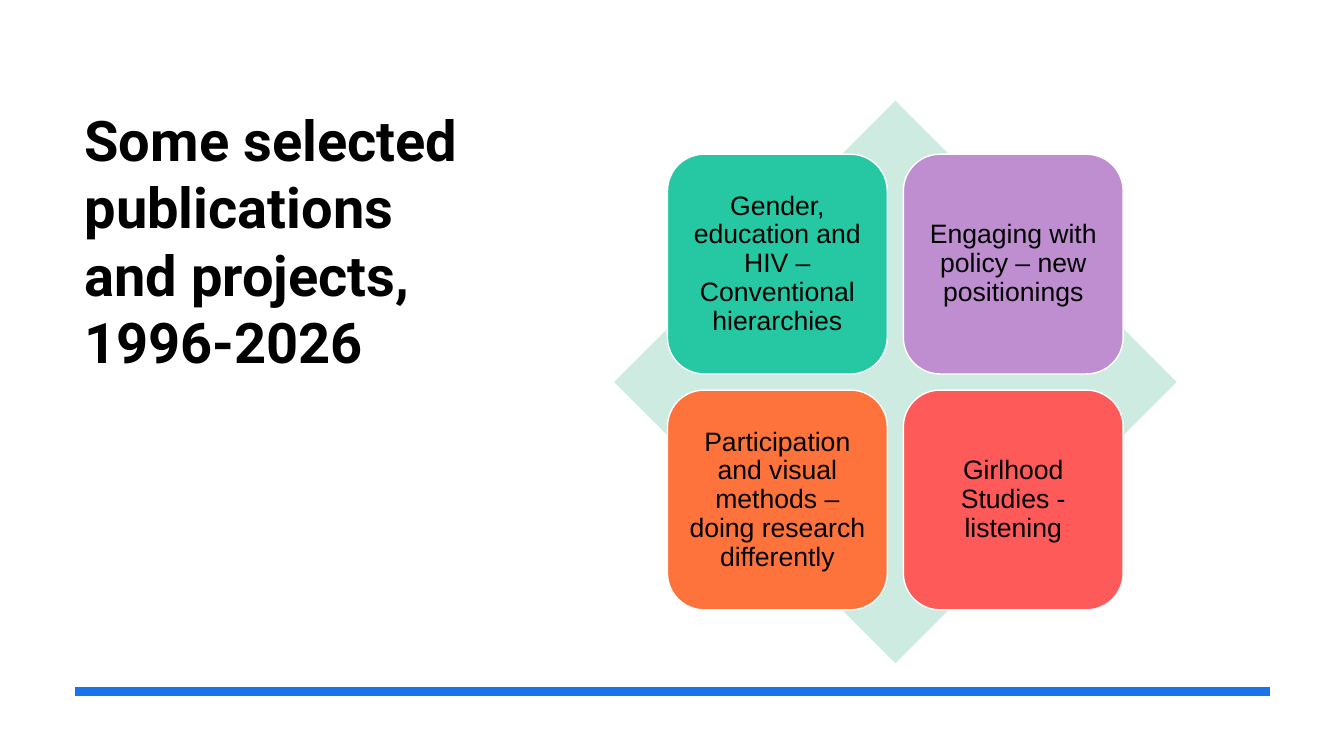
from lxml import etree
from pptx import Presentation
from pptx.dml.color import RGBColor
from pptx.enum.shapes import MSO_CONNECTOR as Connector, MSO_SHAPE as Shape
from pptx.enum.text import MSO_ANCHOR as Anchor, PP_ALIGN as Align
from pptx.oxml.ns import qn
from pptx.util import Inches, Pt

COLOURS = {
    "text": "000000",
    "rule": "1973EB",
    "diamond": "CDEBE0",
    "outline": "FFFFFF",
    "green": "25C8A2",
    "purple": "BF8ED1",
    "orange": "FE733C",
    "red": "FE5A5A",
}
THEMES = [
    ("Gender, education and HIV – Conventional hierarchies", "green"),
    ("Engaging with policy – new positionings", "purple"),
    ("Participation and visual methods – doing research differently", "orange"),
    ("Girlhood Studies - listening", "red"),
]


def colour(name):
    return RGBColor.from_string(COLOURS[name])


def set_font(para, name, size, bold=False):
    para.font.name = name
    para.font.size = Pt(size)
    para.font.bold = bold
    para.font.color.rgb = colour("text")


deck = Presentation()
deck.slide_width, deck.slide_height = Inches(13.33), Inches(7.5)
page = deck.slides.add_slide(deck.slide_layouts[6])

# Title
title = page.shapes.add_textbox(Inches(0.74), Inches(1), Inches(4.02), Inches(4.55))
title.text_frame.word_wrap = True
para = title.text_frame.paragraphs[0]
para.text = "Some selected publications and projects, 1996-2026"
set_font(para, "Roboto", 40, bold=True)

# Rule along the bottom
rule = page.shapes.add_connector(
    Connector.STRAIGHT, Inches(0.74), Inches(6.86), Inches(12.6), Inches(6.86))
rule.line.color.rgb = colour("rule")
rule.line.width = Pt(6)
etree.SubElement(rule._element.spPr, qn("a:effectLst"))

# Diamond behind the themes
matrix = page.shapes.add_group_shape()
diamond = matrix.shapes.add_shape(
    Shape.DIAMOND, Inches(6.09), Inches(1), Inches(5.58), Inches(5.58))
diamond.shadow.inherit = False
diamond.fill.solid()
diamond.fill.fore_color.rgb = colour("diamond")
diamond.line.fill.background()

# Two by two grid of themes
side, pitch = 2.18, 2.34
for index, (text, fill) in enumerate(THEMES):
    row, column = divmod(index, 2)
    box = matrix.shapes.add_shape(
        Shape.ROUNDED_RECTANGLE,
        Inches(6.62 + column * pitch), Inches(1.53 + row * pitch),
        Inches(side), Inches(side))
    box.shadow.inherit = False
    box.fill.solid()
    box.fill.fore_color.rgb = colour(fill)
    box.line.color.rgb = colour("outline")
    box.line.width = Pt(1)

    frame = box.text_frame
    frame.word_wrap = True
    frame.vertical_anchor = Anchor.MIDDLE
    frame.margin_left = frame.margin_right = Inches(0.08)
    frame.margin_top = frame.margin_bottom = Inches(0.08)
    para = frame.paragraphs[0]
    para.text = text
    para.alignment = Align.CENTER
    para.line_spacing = 0.9
    set_font(para, "Arial", 19)

deck.save("out.pptx")
